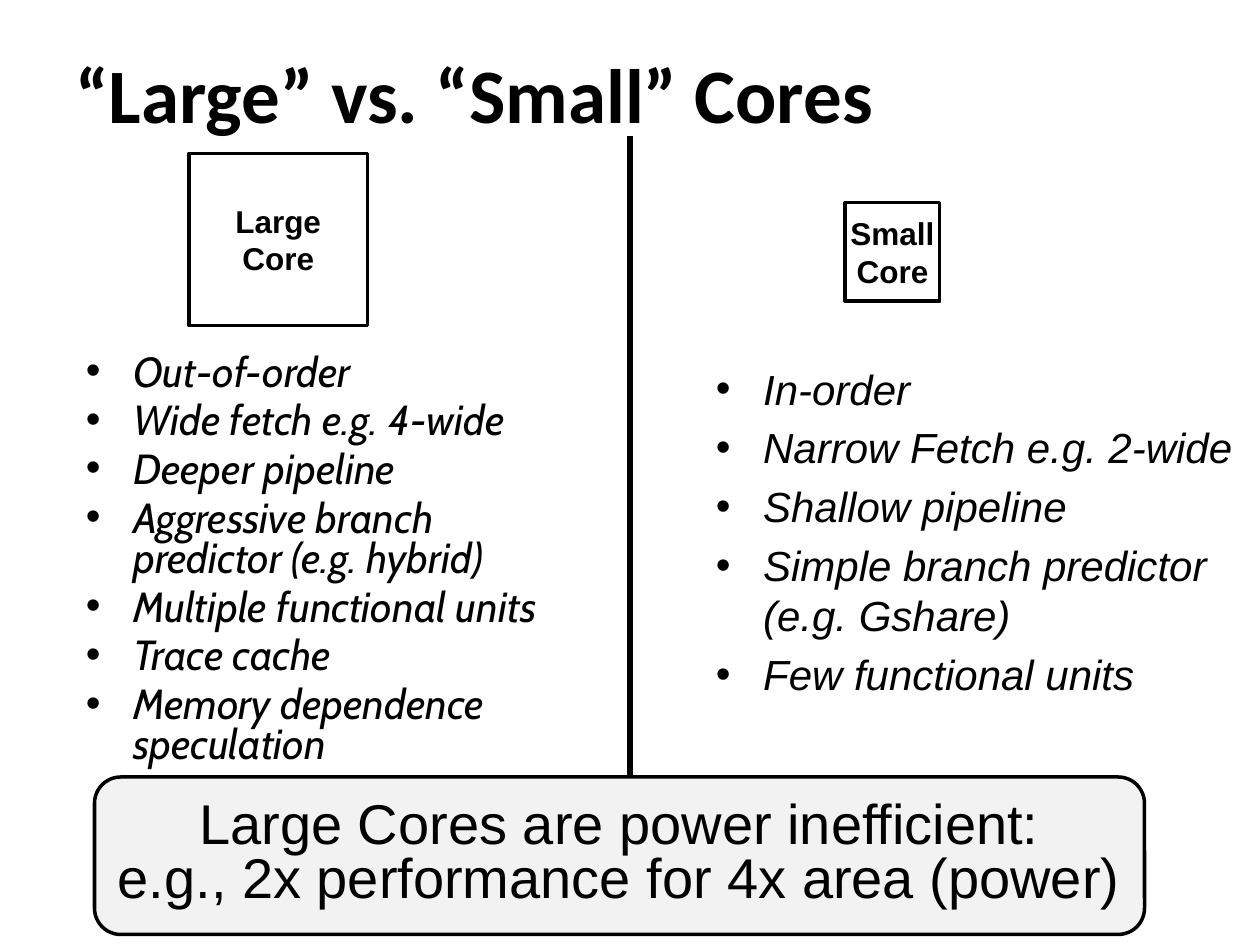
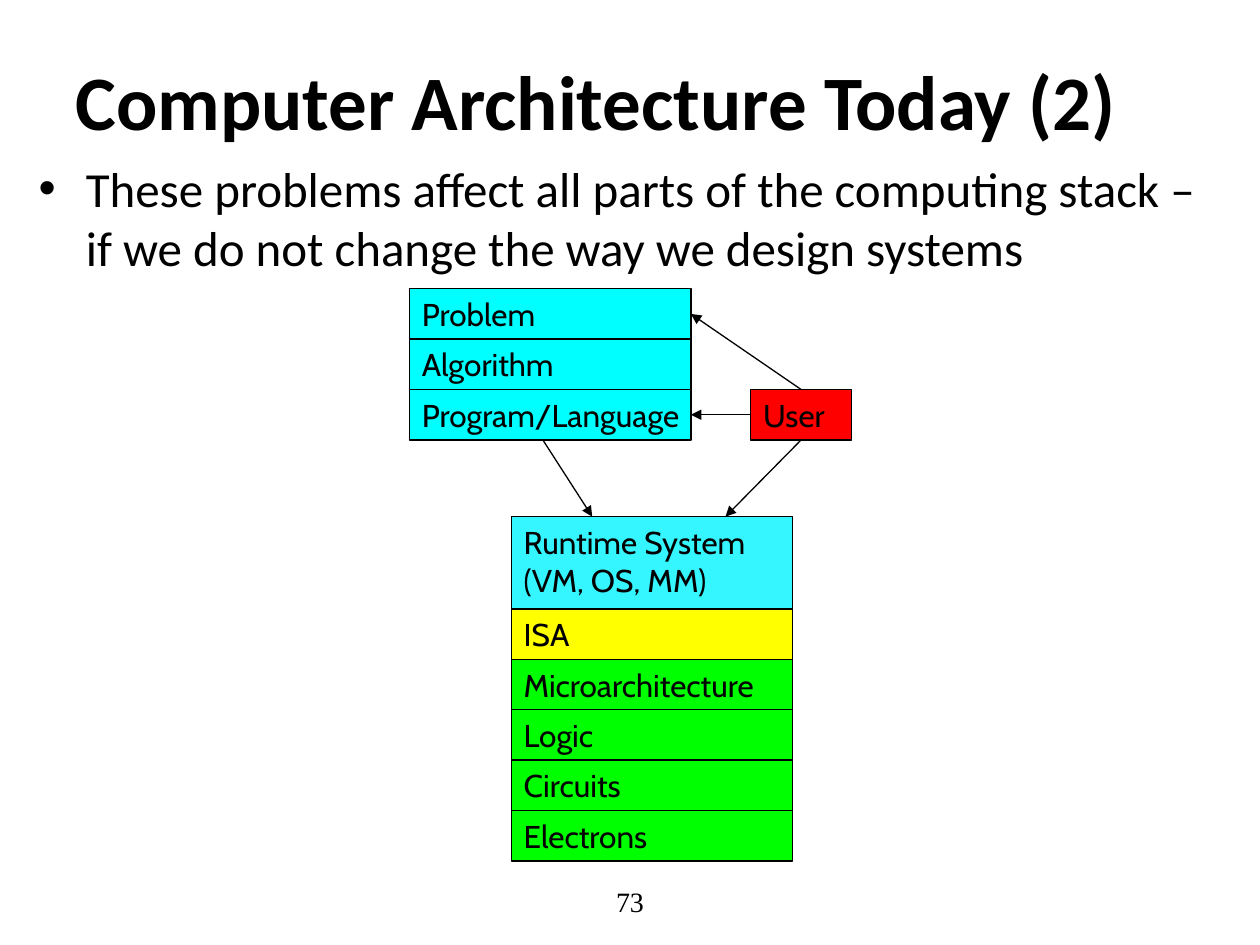
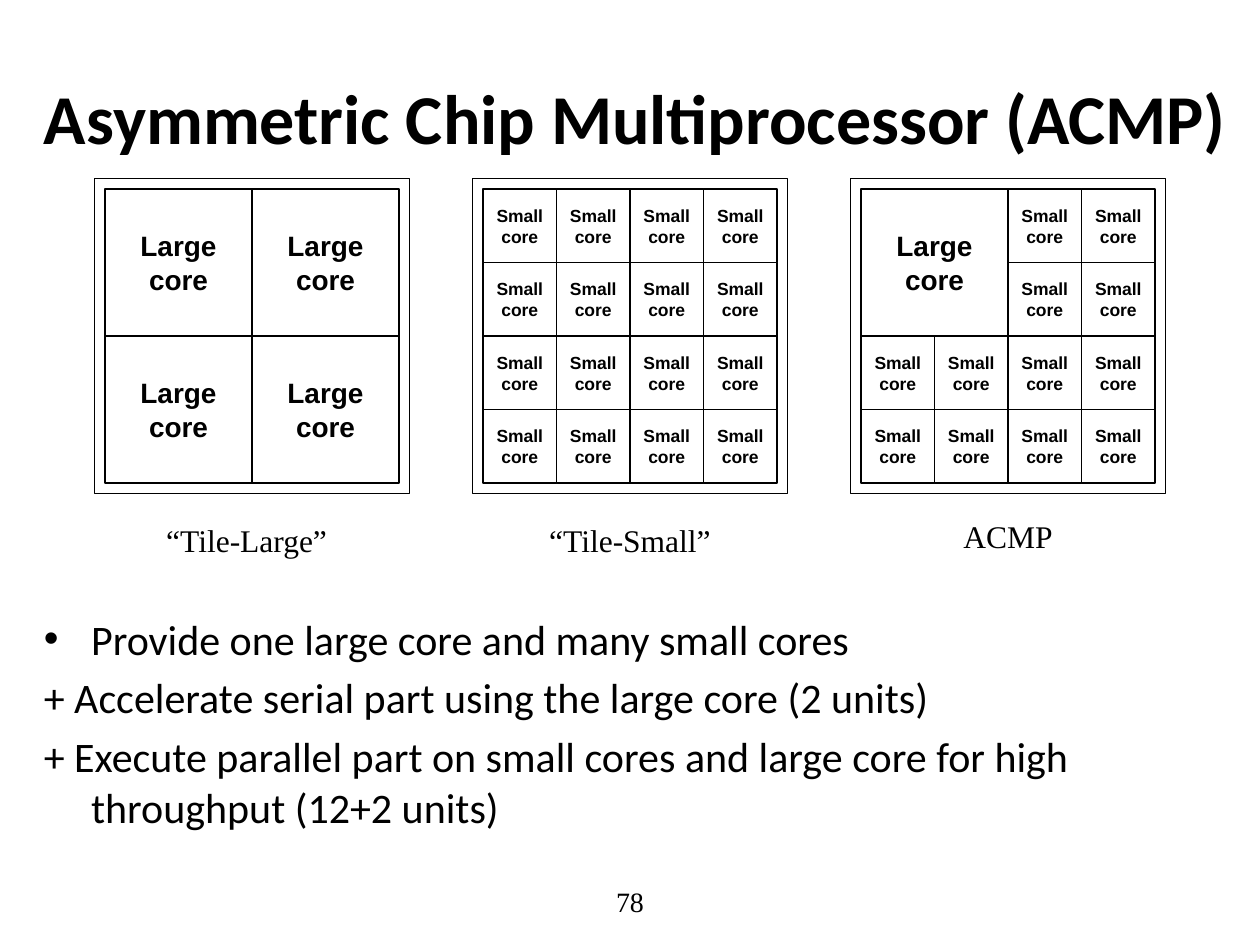
from lxml.etree import SubElement
from pptx import Presentation
from pptx.dml.color import RGBColor
from pptx.enum.shapes import MSO_CONNECTOR, MSO_SHAPE
from pptx.enum.text import MSO_ANCHOR, PP_ALIGN
from pptx.oxml.ns import qn
from pptx.util import Pt

PX = 7620
SLIDE_SIZE = (1200, 900)
INK = "000000"
TITLE_FONT, LABEL_FONT, STACK_FONT, SERIF_FONT = "Calibri", "Arial", "Cabin", "Times New Roman"
HANGING_INDENT = 45
PAGE_NUMBER_BOX = (410, 834, 380, 48)

CORES_TITLE = "“Large” vs. “Small” Cores"
CORES = [("Large\nCore", (180, 146, 170, 164)), ("Small\nCore", (805, 193, 90, 94))]
CORE_TRAITS = [
    ((70, 332, 500, 462), STACK_FONT, 0.8, [
        "Out-of-order", "Wide fetch e.g. 4-wide", "Deeper pipeline",
        "Aggressive branch predictor (e.g. hybrid)", "Multiple functional units",
        "Trace cache", "Memory dependence speculation"]),
    ((670, 340, 530, 360), LABEL_FONT, 1.0, [
        "In-order", "Narrow Fetch e.g. 2-wide", "Shallow pipeline",
        "Simple branch predictor (e.g. Gshare)", "Few functional units"]),
]
DIVIDER = ((600, 130), (600, 740))
VERDICT = "Large Cores are power inefficient:\ne.g., 2x performance for 4x area (power)"
VERDICT_BOX = (90, 740, 1000, 150)

STACK_TITLE = "Computer Architecture Today (2)"
STACK_CLAIM = ("These problems affect all parts of the computing stack – "
               "if we do not change the way we design systems")
LAYER_WIDTH, LAYER_HEIGHT, RUNTIME_HEIGHT = 268, 48, 88
CYAN, LIGHT_CYAN, YELLOW, GREEN, RED = "00FFFF", "35F6FF", "FFFF00", "00FF00", "FF0000"
STACKS = [
    (390, 275, [("Problem", CYAN, LAYER_HEIGHT), ("Algorithm", CYAN, LAYER_HEIGHT),
                ("Program/Language", CYAN, LAYER_HEIGHT)]),
    (487, 492, [("Runtime System\n(VM, OS, MM)", LIGHT_CYAN, RUNTIME_HEIGHT),
                ("ISA", YELLOW, LAYER_HEIGHT), ("Microarchitecture", GREEN, LAYER_HEIGHT),
                ("Logic", GREEN, LAYER_HEIGHT), ("Circuits", GREEN, LAYER_HEIGHT),
                ("Electrons", GREEN, LAYER_HEIGHT)]),
]
USER_BOX = (715, 371, 96, 48)
TOP, LEFT, BOTTOM, RIGHT = range(4)
STACK_ARROWS = [
    ((517, 419), (564, 492), None, None),
    ((715, 395), (658, 395), ("User", LEFT), ("Program/Language", RIGHT)),
    ((763, 419), (691, 492), ("User", BOTTOM), None),
    ((763, 371), (658, 299), ("User", TOP), ("Problem", RIGHT)),
]

CHIPS_TITLE = "Asymmetric Chip Multiprocessor (ACMP)"
CHIPS = [
    ("“Tile-Large”", (80, 490, 310, 48), "LLLL"),
    ("“Tile-Small”", (460, 490, 280, 48), "SSSS"),
    ("ACMP", (820, 487, 280, 48), "LSSS"),
]
CHIP_LEFT, CHIP_TOP, CHIP_SIZE, CHIP_PITCH, CHIP_MARGIN = 90, 170, 300, 360, 10
LARGE_SIZE, SMALL_SIZE = 140, 70
ACMP_POINTS = [
    ("Provide one large core and many small cores", True),
    ("+ Accelerate serial part using the large core (2 units)", False),
    ("+ Execute parallel part on small cores and large core for high "
     "throughput (12+2 units)", False),
]


def color(hex_code):
    return RGBColor.from_string(hex_code)


def emu(lengths):
    return [length * PX for length in lengths]


def write(paragraph, text, font, size, bold=False, italic=False):
    for number, line in enumerate(text.split("\n")):
        if number:
            paragraph.add_line_break()
        run = paragraph.add_run()
        run.text = line
        run.font.name = font
        run.font.size = Pt(size)
        run.font.bold = bold
        run.font.italic = italic
        run.font.color.rgb = color(INK)


def add_text(shapes, box, text, font, size, bold=False,
             align=PP_ALIGN.LEFT, anchor=MSO_ANCHOR.MIDDLE):
    frame = shapes.add_textbox(*emu(box)).text_frame
    frame.word_wrap = True
    frame.vertical_anchor = anchor
    frame.paragraphs[0].alignment = align
    write(frame.paragraphs[0], text, font, size, bold)


def add_list(shapes, box, items, font, size, italic=False, line_spacing=1.0):
    frame = shapes.add_textbox(*emu(box)).text_frame
    frame.word_wrap = True
    for number, (text, bulleted) in enumerate(items):
        paragraph = frame.add_paragraph() if number else frame.paragraphs[0]
        paragraph.line_spacing = line_spacing
        if number:
            paragraph.space_before = Pt(size * 0.2)
        properties = paragraph._p.get_or_add_pPr()
        properties.set("marL", str(HANGING_INDENT * PX))
        properties.set("indent", str(-HANGING_INDENT * PX))
        if bulleted:
            SubElement(properties, qn("a:buFont")).set("typeface", LABEL_FONT)
            SubElement(properties, qn("a:buChar")).set("char", "•")
        else:
            SubElement(properties, qn("a:buNone"))
        write(paragraph, text, font, size, italic=italic)


def add_box(shapes, box, line_width, fill=None, text="", font=LABEL_FONT, size=18, bold=False,
            align=PP_ALIGN.CENTER, anchor=MSO_ANCHOR.MIDDLE, line_spacing=1.0,
            outline=MSO_SHAPE.RECTANGLE):
    shape = shapes.add_shape(outline, *emu(box))
    shape.shadow.inherit = False
    if fill:
        shape.fill.solid()
        shape.fill.fore_color.rgb = color(fill)
    else:
        shape.fill.background()
    shape.line.color.rgb = color(INK)
    shape.line.width = Pt(line_width)
    if text:
        frame = shape.text_frame
        frame.word_wrap = False
        frame.vertical_anchor = anchor
        paragraph = frame.paragraphs[0]
        paragraph.alignment = align
        paragraph.line_spacing = line_spacing
        write(paragraph, text, font, size, bold)
    return shape


def add_line(shapes, start, end, width, arrow=False):
    connector = shapes.add_connector(MSO_CONNECTOR.STRAIGHT, *emu(start + end))
    connector.line.color.rgb = color(INK)
    connector.line.width = Pt(width)
    if arrow:
        SubElement(connector.line._get_or_add_ln(), qn("a:tailEnd")).set("type", "triangle")
    SubElement(connector._element.spPr, qn("a:effectLst"))
    return connector


def add_slide(deck, title, title_box, title_size=44, page_number=None):
    shapes = deck.slides.add_slide(deck.slide_layouts[6]).shapes
    add_text(shapes, title_box, title, TITLE_FONT, title_size, bold=True)
    if page_number:
        add_text(shapes, PAGE_NUMBER_BOX, page_number, SERIF_FONT, 16, align=PP_ALIGN.CENTER)
    return shapes


def build_cores(deck):
    shapes = add_slide(deck, CORES_TITLE, (60, 13, 1080, 150))
    for box, font, line_spacing, traits in CORE_TRAITS:
        add_list(shapes, box, [(trait, True) for trait in traits], font, 24,
                 italic=True, line_spacing=line_spacing)
    add_line(shapes, *DIVIDER, 3)
    for label, box in CORES:
        add_box(shapes, box, 2, text=label, bold=True)
    add_box(shapes, VERDICT_BOX, 2, "F2F2F2", VERDICT, size=32, line_spacing=0.8,
            outline=MSO_SHAPE.FLOWCHART_ALTERNATE_PROCESS)


def build_stack(deck):
    shapes = add_slide(deck, STACK_TITLE, (60, 20, 1080, 150), page_number="73")
    add_list(shapes, (25, 145, 1150, 130), [(STACK_CLAIM, True)], TITLE_FONT, 28)
    layers = [("User", RED, USER_BOX)]
    for left, top, stack in STACKS:
        for label, fill, height in stack:
            layers.append((label, fill, (left, top, LAYER_WIDTH, height)))
            top += height
    drawn = {label: add_box(shapes, box, 0.75, fill, label, STACK_FONT,
                            align=PP_ALIGN.LEFT, anchor=MSO_ANCHOR.TOP)
             for label, fill, box in layers}
    for start, end, source, target in STACK_ARROWS:
        arrow = add_line(shapes, start, end, 0.75, arrow=True)
        if source:
            arrow.begin_connect(drawn[source[0]], source[1])
        if target:
            arrow.end_connect(drawn[target[0]], target[1])


def add_core(shapes, left, top, side, label, size):
    add_box(shapes, (left, top, side, side), 0.75, text=label, size=size, bold=True)


def add_chip(shapes, left, quadrants):
    add_box(shapes, (left, CHIP_TOP, CHIP_SIZE, CHIP_SIZE), 0.25)
    for number, kind in enumerate(quadrants):
        row, column = divmod(number, 2)
        x = left + CHIP_MARGIN + column * LARGE_SIZE
        y = CHIP_TOP + CHIP_MARGIN + row * LARGE_SIZE
        if kind == "L":
            add_core(shapes, x, y, LARGE_SIZE, "Large\ncore", 16)
            continue
        for small_row in range(2):
            for small_column in range(2):
                add_core(shapes, x + small_column * SMALL_SIZE, y + small_row * SMALL_SIZE,
                         SMALL_SIZE, "Small\ncore", 10)


def build_chips(deck):
    shapes = add_slide(deck, CHIPS_TITLE, (30, 36, 1170, 150), 40, "78")
    add_list(shapes, (30, 578, 1130, 234), ACMP_POINTS, TITLE_FONT, 24)
    for number, (caption, caption_box, quadrants) in enumerate(CHIPS):
        chip = shapes.add_group_shape().shapes
        add_chip(chip, CHIP_LEFT + number * CHIP_PITCH, quadrants)
        add_text(chip, caption_box, caption, SERIF_FONT, 18,
                 align=PP_ALIGN.CENTER, anchor=MSO_ANCHOR.TOP)


def main():
    deck = Presentation()
    deck.slide_width, deck.slide_height = emu(SLIDE_SIZE)
    build_cores(deck)
    build_stack(deck)
    build_chips(deck)
    deck.save("out.pptx")


if __name__ == "__main__":
    main()
